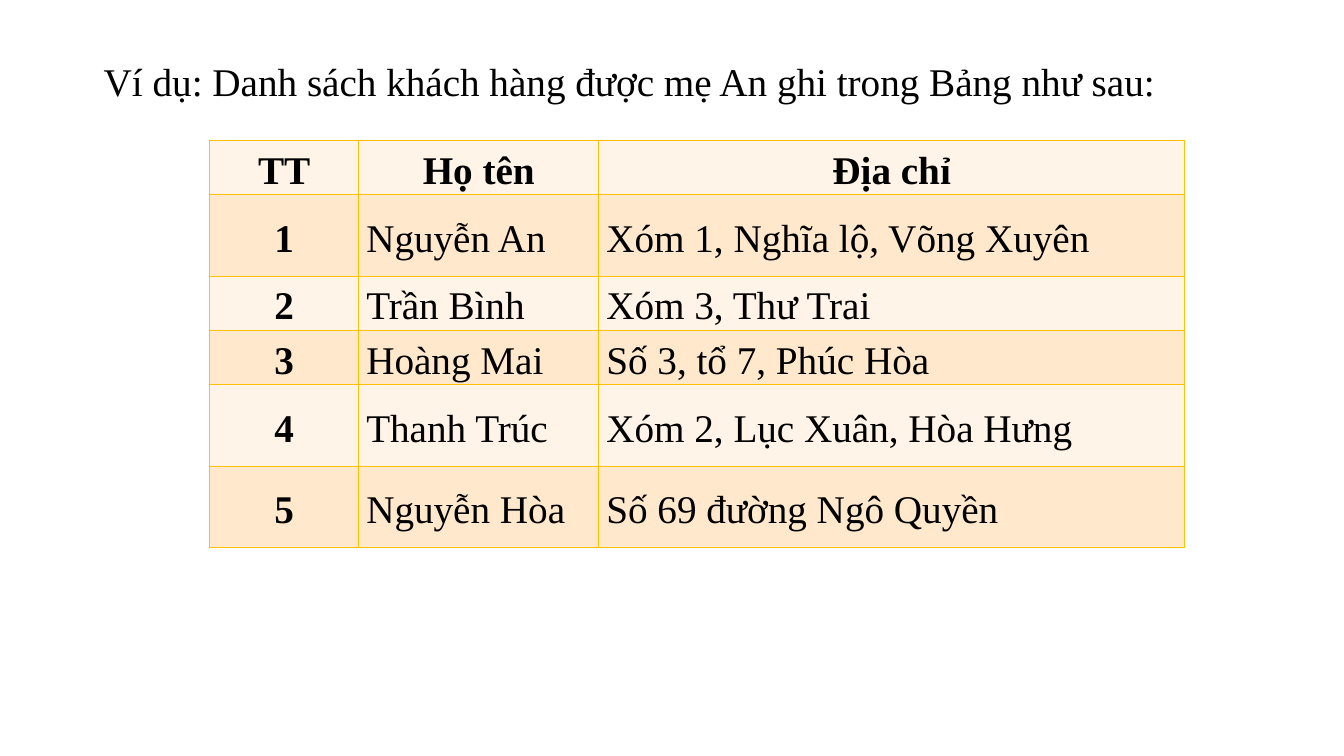
from pptx import Presentation
from pptx.dml.color import RGBColor as Rgb
from pptx.enum.text import MSO_ANCHOR as Anchor, MSO_AUTO_SIZE as Auto, PP_ALIGN as Align
from pptx.oxml import parse_xml
from pptx.oxml.ns import nsdecls
from pptx.util import Cm, Pt


def color(code):
    return Rgb.from_string(code)


def write(frame, text, align, bold=False):
    frame.text = text
    para = frame.paragraphs[0]
    para.alignment = align
    para.line_spacing = 1.15
    para.space_before = para.space_after = Pt(6)
    font = para.runs[0].font
    font.name, font.size, font.bold = "Times New Roman", Pt(28), bold
    font.color.rgb = color("000000")


deck = Presentation()
deck.slide_width, deck.slide_height = Cm(33.87), Cm(19.05)
slide = deck.slides.add_slide(deck.slide_layouts[5])

# Title
title = slide.shapes.title
title.left, title.top, title.width, title.height = Cm(2.36), Cm(1.14), Cm(27.89), Cm(1.63)
frame = title.text_frame
frame.word_wrap = True
frame.auto_size = Auto.SHAPE_TO_FIT_TEXT
frame.vertical_anchor = Anchor.TOP
write(frame, "Ví dụ: Danh sách khách hàng được mẹ An ghi trong Bảng như sau:", Align.JUSTIFY)

# Customer table
rows = [
    ("TT", "Họ tên", "Địa chỉ"),
    ("1", "Nguyễn An", "Xóm 1, Nghĩa lộ, Võng Xuyên"),
    ("2", "Trần Bình", "Xóm 3, Thư Trai"),
    ("3", "Hoàng Mai", "Số 3, tổ 7, Phúc Hòa"),
    ("4", "Thanh Trúc", "Xóm 2, Lục Xuân, Hòa Hưng"),
    ("5", "Nguyễn Hòa", "Số 69 đường Ngô Quyền"),
]
widths = [3.76, 6.05, 14.76]
low, high = 1.37, 2.05
heights = [low, high, low, low, high, high]
table = slide.shapes.add_table(
    len(rows), len(widths), Cm(5.28), Cm(3.54), Cm(sum(widths)), Cm(sum(heights))
).table
for col, width in zip(table.columns, widths):
    col.width = Cm(width)
for row, height in zip(table.rows, heights):
    row.height = Cm(height)

# Cells with banded fill and gold borders
for r, row in enumerate(rows):
    for c, text in enumerate(row):
        cell = table.cell(r, c)
        head = r == 0 or c == 0
        write(cell.text_frame, text, Align.CENTER if head else Align.JUSTIFY, head)
        cell.vertical_anchor = Anchor.MIDDLE
        cell.margin_left = cell.margin_right = Cm(0.19)
        cell.margin_top = cell.margin_bottom = Cm(0)
        cell.fill.solid()
        cell.fill.fore_color.rgb = color("FFE8CC" if r % 2 else "FFF4E7")
        props = cell._tc.get_or_add_tcPr()
        for i, side in enumerate("LRTB"):
            props.insert(i, parse_xml(
                f'<a:ln{side} {nsdecls("a")} w="{Pt(1)}"><a:solidFill>'
                f'<a:srgbClr val="FFC000"/></a:solidFill></a:ln{side}>'
            ))

deck.save("out.pptx")
